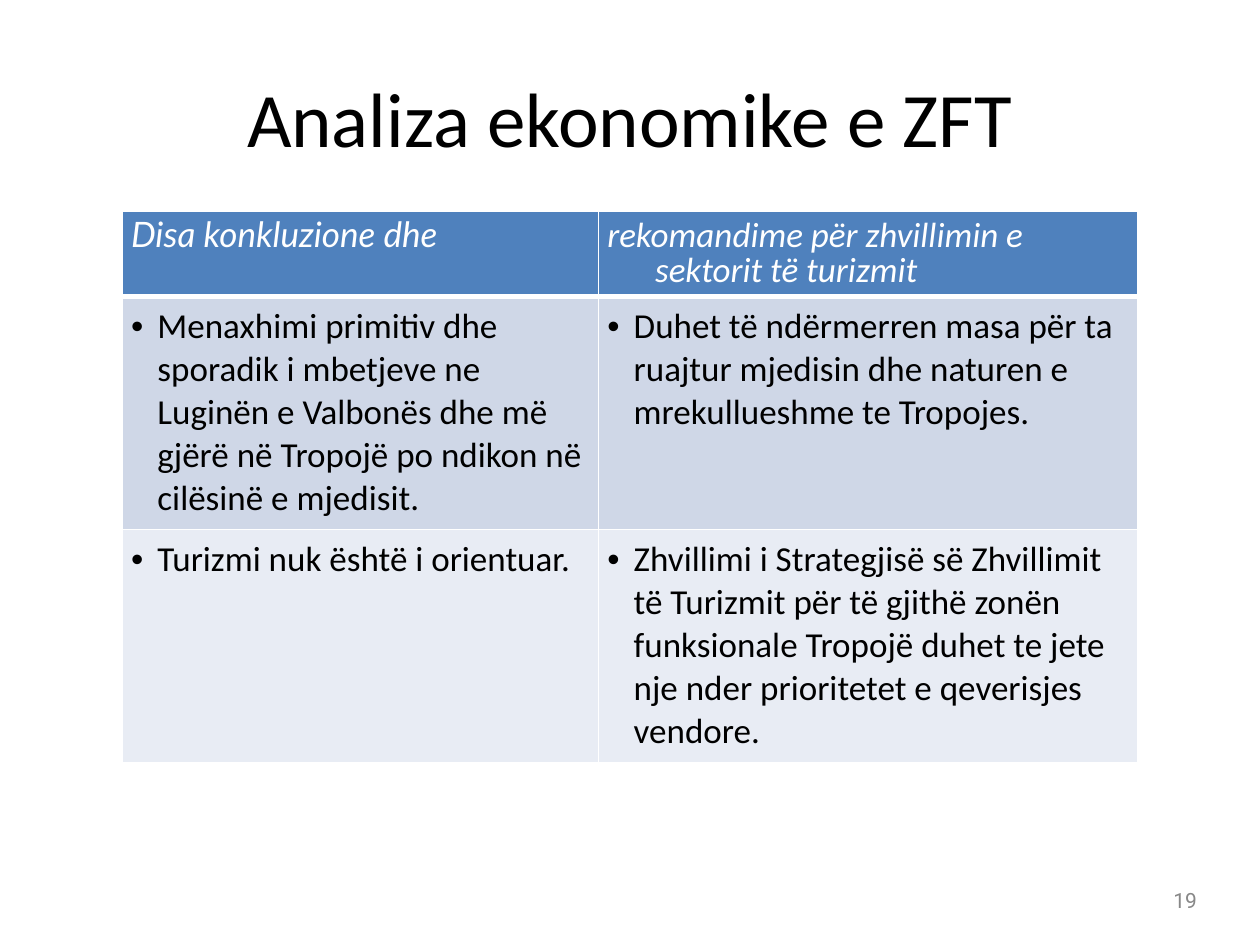
from lxml.etree import SubElement
from pptx import Presentation
from pptx.dml.color import RGBColor
from pptx.enum.text import MSO_ANCHOR, PP_ALIGN
from pptx.oxml.ns import qn
from pptx.util import Inches, Pt

THEME = {
    "font": "Calibri",
    "accent_font": "Lato",
    "number_font": "Roboto",
    "title_size": 44,
    "body_size": 20,
    "number_size": 12,
    "text": "000000",
    "light_text": "FFFFFF",
    "muted_text": "888888",
    "border": "FFFFFF",
    "row_fills": ("4F81BD", "CFD7E7", "E8ECF4"),
}

TITLE = "Analiza ekonomike e ZFT"
PAGE_NUMBER = "19"
ROWS = [
    ("Disa konkluzione dhe",
     "rekomandime për zhvillimin e sektorit të turizmit"),
    ("Menaxhimi primitiv dhe sporadik i mbetjeve ne Luginën e Valbonës dhe më gjërë "
     "në Tropojë po ndikon në cilësinë e mjedisit.",
     "Duhet të ndërmerren masa për ta ruajtur mjedisin dhe naturen e mrekullueshme te Tropojes."),
    ("Turizmi nuk është i orientuar.",
     "Zhvillimi i Strategjisë së Zhvillimit të Turizmit për të gjithë zonën funksionale "
     "Tropojë duhet te jete nje nder prioritetet e qeverisjes vendore."),
]

SLIDE_SIZE = (10, 7.5)
TABLE_ORIGIN = (0.97, 1.68)
COLUMN_WIDTHS = (3.78, 4.28)
ROW_HEIGHTS = (0.67, 1.85, 1.85)
CELL_MARGIN = 0.07
HEADER_INDENT = 0.38
BULLET_INDENT = 0.21
SIDES = ("left", "right", "top", "bottom")


def set_attributes(target, values):
    for name, value in values.items():
        setattr(target, name, value)


def write(paragraph, text, font, size, color, italic=False):
    run = paragraph.add_run()
    run.text = text
    set_attributes(run.font, {"name": font, "size": Pt(size), "italic": italic})
    run.font.color.rgb = RGBColor.from_string(color)


def add_text(slide, box, text, alignment, font, size, color):
    frame = slide.shapes.add_textbox(*map(Inches, box)).text_frame
    set_attributes(frame, {f"margin_{side}": 0 for side in SIDES})
    set_attributes(frame, {"word_wrap": True, "vertical_anchor": MSO_ANCHOR.MIDDLE})
    paragraph = frame.paragraphs[0]
    paragraph.alignment = alignment
    write(paragraph, text, font, size, color)


def set_borders(cell, bottom_width):
    properties = cell._tc.get_or_add_tcPr()
    widths = {"lnL": 1, "lnR": 1, "lnT": 1, "lnB": bottom_width}
    for position, (tag, width) in enumerate(widths.items()):
        line = SubElement(properties, qn(f"a:{tag}"), w=str(Pt(width)))
        fill = SubElement(line, qn("a:solidFill"))
        SubElement(fill, qn("a:srgbClr"), val=THEME["border"])
        properties.insert(position, line)


def set_indent(paragraph, indent, bullet=None):
    properties = paragraph._p.get_or_add_pPr()
    properties.set("marL", str(Inches(indent)))
    properties.set("indent", str(-Inches(indent)))
    if bullet:
        SubElement(properties, qn("a:buFont"), typeface="Arial")
        SubElement(properties, qn("a:buChar"), char=bullet)


def fill_cell(cell, text, row, column):
    header = row == 0
    first = header and column == 0
    set_attributes(cell, {f"margin_{side}": Inches(CELL_MARGIN) for side in SIDES})
    cell.fill.solid()
    cell.fill.fore_color.rgb = RGBColor.from_string(THEME["row_fills"][row])
    set_borders(cell, 3 if header else 1)
    paragraph = cell.text_frame.paragraphs[0]
    set_attributes(paragraph, {
        "space_before": Pt(0 if first else 4),
        "line_spacing": 0.8 if header else 1.0,
    })
    set_indent(paragraph, HEADER_INDENT if header else BULLET_INDENT, None if header else "•")
    write(paragraph, text, THEME["accent_font" if first else "font"], THEME["body_size"],
          THEME["light_text" if header else "text"], header)


def add_conclusions_table(slide):
    size = (sum(COLUMN_WIDTHS), sum(ROW_HEIGHTS))
    table = slide.shapes.add_table(
        len(ROWS), len(COLUMN_WIDTHS), *map(Inches, TABLE_ORIGIN + size)).table
    for column, width in zip(table.columns, COLUMN_WIDTHS):
        column.width = Inches(width)
    for row, height in zip(table.rows, ROW_HEIGHTS):
        row.height = Inches(height)
    for row, texts in enumerate(ROWS):
        for column, text in enumerate(texts):
            fill_cell(table.cell(row, column), text, row, column)


def main():
    presentation = Presentation()
    width, height = map(Inches, SLIDE_SIZE)
    set_attributes(presentation, {"slide_width": width, "slide_height": height})
    slide = presentation.slides.add_slide(presentation.slide_layouts[6])
    add_text(slide, (0.5, 0.1, 9, 1.65), TITLE, PP_ALIGN.CENTER,
             THEME["font"], THEME["title_size"], THEME["text"])
    add_text(slide, (7.17, 7, 2.33, 0.29), PAGE_NUMBER, PP_ALIGN.RIGHT,
             THEME["number_font"], THEME["number_size"], THEME["muted_text"])
    add_conclusions_table(slide)
    presentation.save("out.pptx")


if __name__ == "__main__":
    main()
